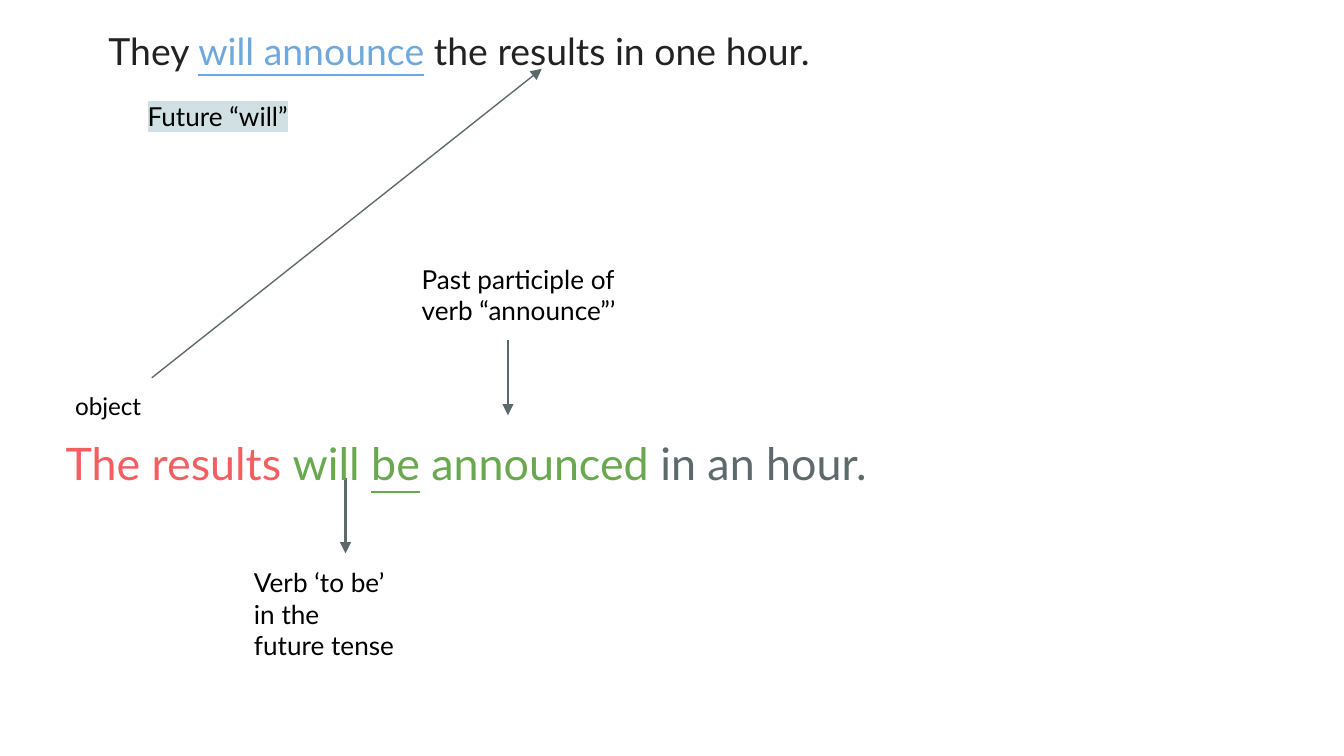
from lxml import etree
from pptx import Presentation
from pptx import util as u
from pptx.dml.color import RGBColor
from pptx.enum import shapes, text
from pptx.oxml.ns import qn

BLACK = RGBColor(0x00, 0x00, 0x00)
WHITE = RGBColor(0xFF, 0xFF, 0xFF)
INK = RGBColor(0x22, 0x22, 0x22)
SLATE = RGBColor(0x5E, 0x69, 0x6C)
BLUE = RGBColor(0x6F, 0xA8, 0xDC)
RED = RGBColor(0xF5, 0x5E, 0x61)
GREEN = RGBColor(0x6A, 0xA8, 0x4F)
PALE_TEAL = RGBColor(0xD0, 0xE0, 0xE3)


class GrammarSlide:
    font_name = "Lato"
    inset = u.Cm(0.25)

    def __init__(self, slide):
        self.slide = slide

    def sentence(self, left, top, width, height, size, parts, highlight=None):
        """Add a line of text; each part is (words, colour, underlined)."""
        box = self.slide.shapes.add_textbox(
            u.Cm(left), u.Cm(top), u.Cm(width), u.Cm(height))
        frame = box.text_frame
        frame.word_wrap = True
        frame.auto_size = text.MSO_AUTO_SIZE.SHAPE_TO_FIT_TEXT
        frame.margin_left = frame.margin_right = self.inset
        frame.margin_top = frame.margin_bottom = self.inset
        paragraph = frame.paragraphs[0]
        paragraph.font.name = self.font_name
        paragraph.font.size = u.Pt(size)
        if len(parts) == 1:
            paragraph.font.color.rgb = parts[0][1]
        for words, colour, underlined in parts:
            run = paragraph.add_run()
            run.text = words
            if len(parts) > 1:
                run.font.color.rgb = colour
            if underlined:
                run.font.underline = True
            if highlight is not None:
                mark = etree.SubElement(run._r.get_or_add_rPr(), qn("a:highlight"))
                etree.SubElement(mark, qn("a:srgbClr"), val=str(highlight))

    def label(self, left, top, width, height, words, size=14, highlight=None):
        self.sentence(left, top, width, height, size,
                      [(words, BLACK, False)], highlight)

    def arrow(self, x1, y1, x2, y2, weight):
        """Add a line with its arrowhead at the second point."""
        line = self.slide.shapes.add_connector(
            shapes.MSO_CONNECTOR.STRAIGHT,
            u.Cm(x1), u.Cm(y1), u.Cm(x2), u.Cm(y2))
        line.line.color.rgb = SLATE
        line.line.width = u.Pt(weight)
        etree.SubElement(line.line._get_or_add_ln(), qn("a:tailEnd"), type="triangle")
        etree.SubElement(line._element.spPr, qn("a:effectLst"))


def main():
    deck = Presentation()
    deck.slide_width, deck.slide_height = u.Cm(25.4), u.Cm(14.29)
    grammar = GrammarSlide(deck.slides.add_slide(deck.slide_layouts[6]))

    # Notes on the passive sentence
    grammar.label(1.17, 7.14, 3.38, 1.07, "object", size=13)
    grammar.label(4.55, 10.46, 3.18, 2.31, "Verb ‘to be’ in the future tense")
    grammar.label(7.72, 4.72, 4.45, 1.7, "Past participle of verb “announce”’")
    for x, y in ((6.53, 9.04), (9.6, 6.43)):
        grammar.arrow(x, y, x, y + 1.42, 1.5)

    # Active sentence and its tense
    grammar.sentence(1.8, 0.28, 20.65, 1.37, 20, [
        ("They ", INK, False),
        ("will announce", BLUE, True),
        (" the results in one hour.", INK, False),
    ], WHITE)
    grammar.label(2.54, 1.65, 6.2, 1.12, "Future “will”", highlight=PALE_TEAL)

    # Passive sentence
    grammar.sentence(0.99, 7.98, 18.62, 1.55, 24, [
        ("The results ", RED, False),
        ("will ", GREEN, False),
        ("be", GREEN, True),
        (" announced ", GREEN, False),
        ("in an hour.", SLATE, False),
    ])

    # The object in the active sentence
    grammar.arrow(2.87, 7.14, 10.24, 1.3, 0.75)

    deck.save("out.pptx")


if __name__ == "__main__":
    main()
